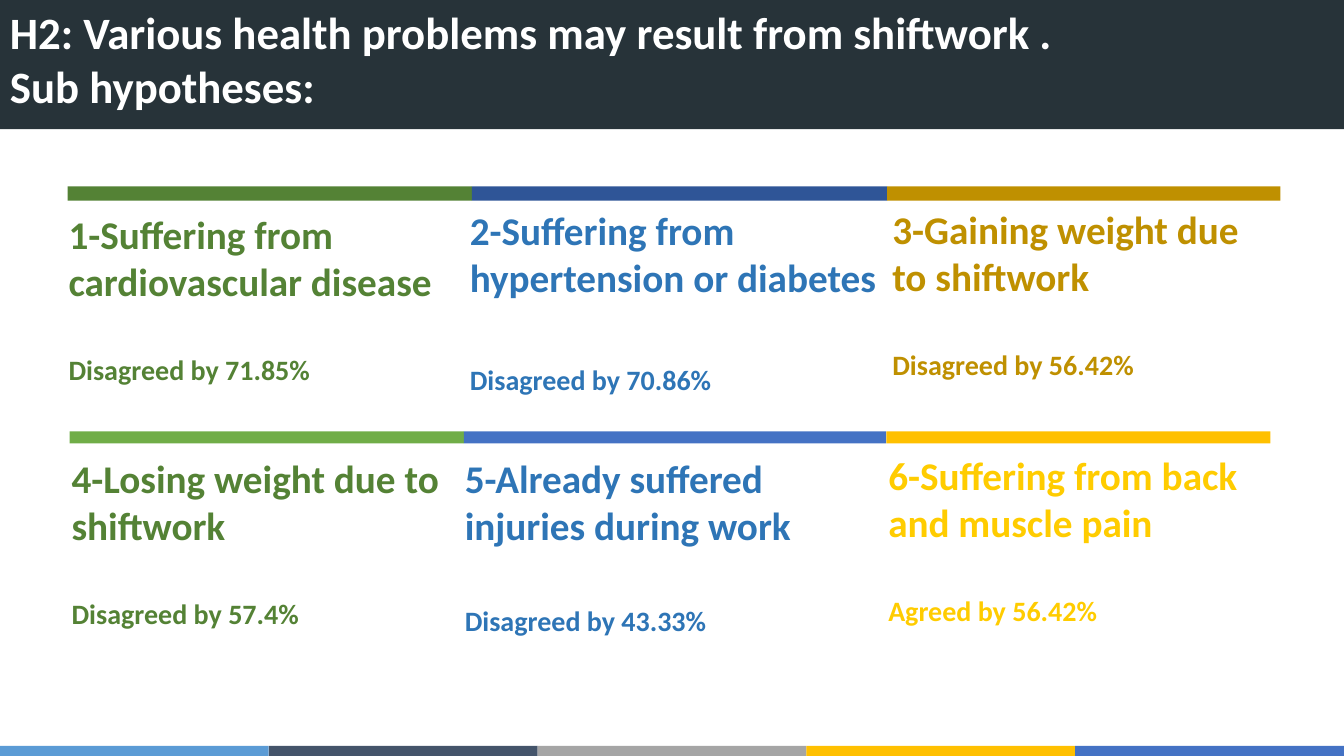
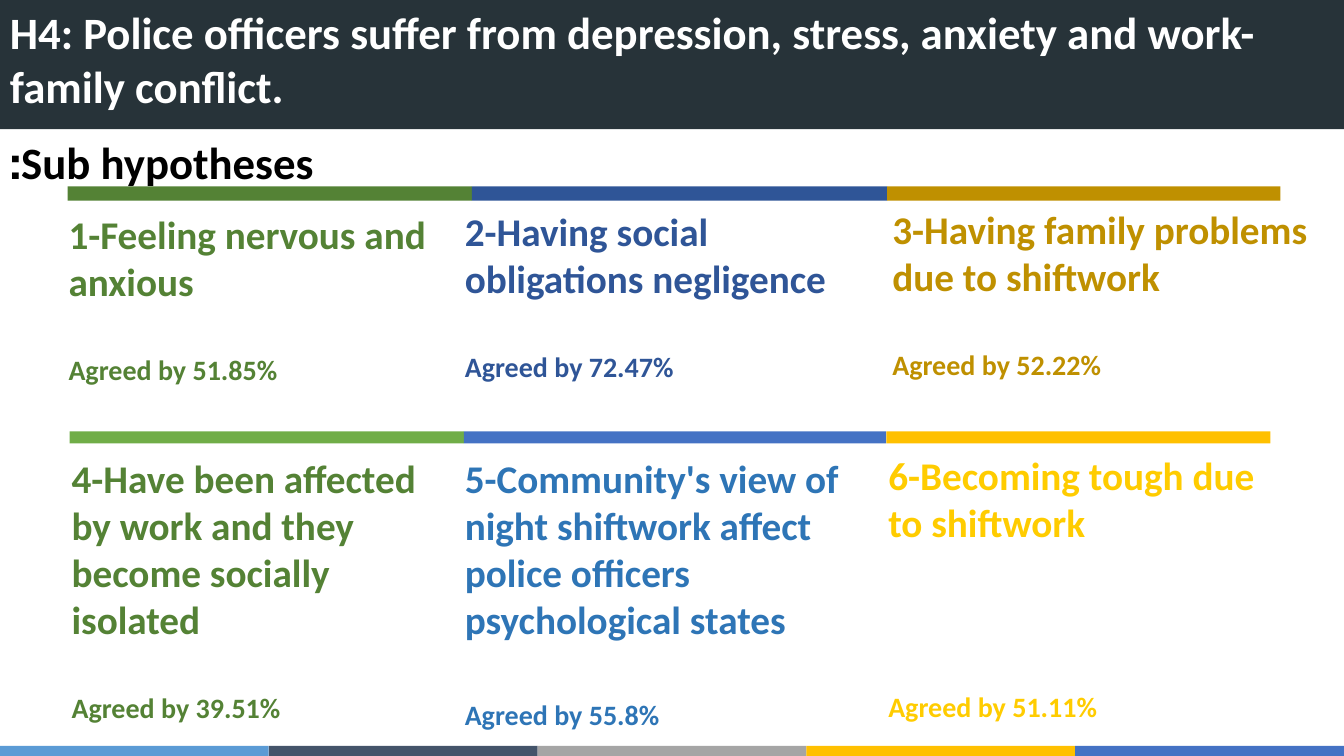
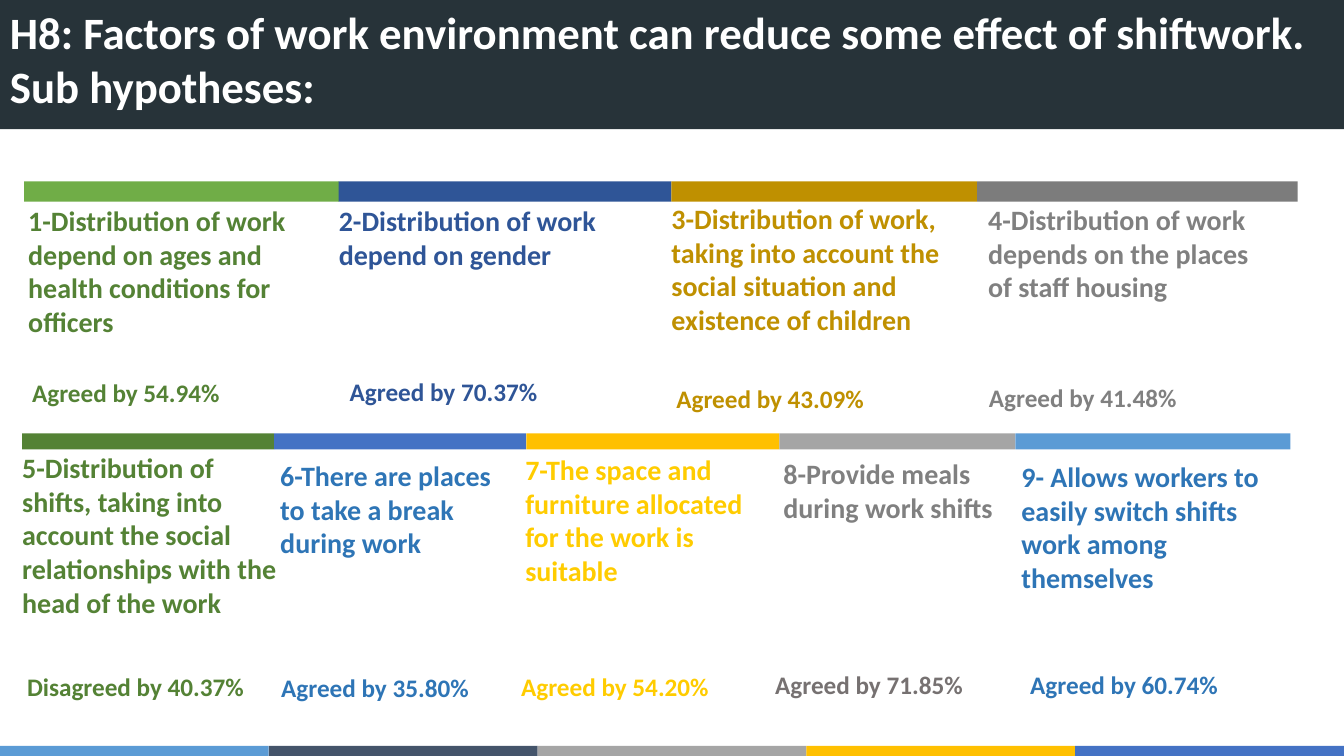
from dataclasses import dataclass, replace
from itertools import pairwise

import pptx
import pptx.dml.color
import pptx.enum.shapes
import pptx.enum.text
import pptx.presentation
import pptx.slide
import pptx.text.text
import pptx.util

Inches = pptx.util.Inches
FONT = "Calibri"
SLIDE_WIDTH, SLIDE_HEIGHT = 13.33, 7.5
CLAIM_HEIGHT, RESULT_HEIGHT = 2.0, 0.4
COLORS = {
    "white": "FFFFFF",
    "black": "000000",
    "header": "273339",
    "sky": "5B9BD5",
    "slate": "44546A",
    "silver": "A5A5A5",
    "amber": "FFC000",
    "blue": "4472C4",
    "green": "70AD47",
    "forest": "548235",
    "navy": "2F5597",
    "ocean": "2E75B6",
    "gold": "BF9000",
    "yellow": "FFCC00",
    "steel": "7C7C7C",
    "gray": "808080",
    "stone": "767171",
}
FOOTER_COLORS = ["sky", "slate", "silver", "amber", "blue"]


@dataclass(frozen=True)
class Stripe:
    """A row of touching bars; each color fills the span between two edges."""
    top: float
    height: float
    edges: list[float]
    colors: list[str]


@dataclass(frozen=True)
class Slot:
    """Place and color of a text; gap is the space in points before its result."""
    left: float
    top: float
    width: float
    color: str
    gap: float = 34.2


@dataclass(frozen=True)
class Finding:
    claim: str
    result: str


FOOTER = Stripe(7.4, 0.1, [SLIDE_WIDTH * i / 5 for i in range(6)], FOOTER_COLORS)
SIX_STRIPES = [
    Stripe(1.85, 0.14, [0.67, 4.68, 8.8, 12.7], ["forest", "navy", "gold"]),
    Stripe(4.28, 0.12, [0.69, 4.6, 8.79, 12.6], ["green", "blue", "amber"]),
]
NINE_STRIPES = [
    Stripe(1.8, 0.2, [0.24, 3.36, 6.66, 9.69, 12.87],
           ["green", "navy", "gold", "steel"]),
    Stripe(4.3, 0.16, [0.22, 2.72, 5.22, 7.73, 10.07, 12.8],
           ["forest", "blue", "amber", "silver", "sky"]),
]

HEALTH_SLOTS = [
    Slot(0.68, 2.09, 3.97, "forest"),
    Slot(4.66, 2.05, 4.24, "ocean", 43.9),
    Slot(8.85, 2.04, 3.85, "gold"),
    Slot(0.71, 4.51, 3.91, "forest"),
    Slot(4.61, 4.51, 4.16, "ocean", 39.1),
    Slot(8.81, 4.48, 3.85, "yellow"),
]
STRESS_SLOTS = [
    HEALTH_SLOTS[0],
    Slot(4.61, 2.06, 4.28, "navy"),
    replace(HEALTH_SLOTS[2], width=4.48),
    *HEALTH_SLOTS[3:5],
    replace(HEALTH_SLOTS[5], gap=102.5),
]
FACTOR_SLOTS = [
    Slot(0.28, 2.02, 3.09, "forest"),
    Slot(3.36, 2.02, 3.09, "navy"),
    Slot(6.66, 2.0, 3.02, "gold"),
    Slot(9.8, 2.01, 2.91, "gray"),
    Slot(0.22, 4.47, 2.77, "forest"),
    Slot(2.78, 4.55, 2.27, "ocean"),
    Slot(5.21, 4.49, 2.48, "yellow"),
    Slot(7.77, 4.53, 2.38, "gray"),
    Slot(10.13, 4.56, 2.81, "ocean"),
]
RESULT_SLOTS = [
    Slot(0.22, 3.69, 2.44, "forest"),
    Slot(3.37, 3.68, 2.44, "navy"),
    Slot(6.61, 3.75, 2.44, "gold"),
    Slot(9.71, 3.74, 2.44, "gray"),
    Slot(0.17, 6.61, 2.44, "forest"),
    Slot(2.69, 6.62, 2.44, "ocean"),
    Slot(5.07, 6.61, 2.44, "yellow"),
    Slot(7.59, 6.59, 2.44, "stone"),
    Slot(10.12, 6.59, 2.44, "ocean"),
]

HEALTH_FINDINGS = [
    Finding("1-Suffering from cardiovascular disease", "Disagreed by 71.85%"),
    Finding("2-Suffering from hypertension or diabetes", "Disagreed by 70.86%"),
    Finding("3-Gaining weight due to shiftwork", "Disagreed by 56.42%"),
    Finding("4-Losing weight due to shiftwork", "Disagreed by 57.4%"),
    Finding("5-Already suffered injuries during work", "Disagreed by 43.33%"),
    Finding("6-Suffering from back and muscle pain", "Agreed by 56.42%"),
]
STRESS_FINDINGS = [
    Finding("1-Feeling nervous and anxious", "Agreed by 51.85%"),
    Finding("2-Having social obligations negligence", "Agreed by 72.47%"),
    Finding("3-Having family problems due to shiftwork", "Agreed by 52.22%"),
    Finding("4-Have been affected by work and they become socially isolated",
            "Agreed by 39.51%"),
    Finding("5-Community's view of night shiftwork affect police officers "
            "psychological states", "Agreed by 55.8%"),
    Finding("6-Becoming tough due to shiftwork", "Agreed by 51.11%"),
]
FACTOR_FINDINGS = [
    Finding("1-Distribution of work depend on ages and health conditions for officers",
            "Agreed by 54.94%"),
    Finding("2-Distribution of work depend on gender", "Agreed by 70.37%"),
    Finding("3-Distribution of work, taking into account the social situation "
            "and existence of children", "Agreed by 43.09%"),
    Finding("4-Distribution of work depends on the places of staff housing",
            "Agreed by 41.48%"),
    Finding("5-Distribution of shifts, taking into account the social "
            "relationships with the head of the work", "Disagreed by 40.37%"),
    Finding("6-There are places to take a break during work", "Agreed by 35.80%"),
    Finding("7-The space and furniture allocated for the work is suitable",
            "Agreed by 54.20%"),
    Finding("8-Provide meals during work shifts", "Agreed by 71.85%"),
    Finding("9- Allows workers to easily switch shifts work among themselves",
            "Agreed by 60.74%"),
]


def rgb(color: str) -> pptx.dml.color.RGBColor:
    return pptx.dml.color.RGBColor.from_string(COLORS[color])


def add_bar(slide: pptx.slide.Slide, left: float, top: float,
            width: float, height: float, color: str) -> None:
    bar = slide.shapes.add_shape(
        pptx.enum.shapes.MSO_SHAPE.RECTANGLE,
        Inches(left), Inches(top), Inches(width), Inches(height))
    bar.shadow.inherit = False
    bar.fill.solid()
    bar.fill.fore_color.rgb = rgb(color)
    bar.line.fill.background()


def add_stripe(slide: pptx.slide.Slide, stripe: Stripe) -> None:
    for (left, right), color in zip(pairwise(stripe.edges), stripe.colors):
        add_bar(slide, left, stripe.top, right - left, stripe.height, color)


def add_text(slide: pptx.slide.Slide, slot: Slot, height: float,
             lines: list[str], sizes: list[float]) -> pptx.text.text.TextFrame:
    """Write one bold paragraph per line, each in its own size."""
    frame = slide.shapes.add_textbox(
        Inches(slot.left), Inches(slot.top),
        Inches(slot.width), Inches(height)).text_frame
    frame.word_wrap = True
    frame.text = "\n".join(lines)
    for paragraph, size in zip(frame.paragraphs, sizes):
        paragraph.font.name = FONT
        paragraph.font.size = pptx.util.Pt(size)
        paragraph.font.bold = True
        paragraph.font.color.rgb = rgb(slot.color)
    return frame


def add_claim(slide: pptx.slide.Slide, slot: Slot,
              lines: list[str], sizes: list[float]) -> None:
    """Write a claim flush with its slot, with its result below if given."""
    frame = add_text(slide, slot, CLAIM_HEIGHT, lines, sizes)
    frame.margin_left = frame.margin_top = frame.margin_bottom = 0
    frame.margin_right = Inches(0.13)
    for result in frame.paragraphs[1:]:
        result.space_before = pptx.util.Pt(slot.gap)


def add_hypothesis_slide(deck: pptx.presentation.Presentation, title: list[str],
                         stripes: list[Stripe]) -> pptx.slide.Slide:
    slide = deck.slides.add_slide(deck.slide_layouts[6])
    add_stripe(slide, FOOTER)
    add_bar(slide, 0, -0.01, SLIDE_WIDTH, 1.29, "header")
    add_text(slide, Slot(0, 0, SLIDE_WIDTH, "white"), 1.18, title, [32] * len(title))
    for stripe in stripes:
        add_stripe(slide, stripe)
    return slide


def add_six_findings(slide: pptx.slide.Slide, slots: list[Slot],
                     findings: list[Finding]) -> None:
    for slot, finding in zip(slots, findings):
        add_claim(slide, slot, [finding.claim, finding.result], [28, 20])


def add_right_to_left_subtitle(slide: pptx.slide.Slide, subtitle: str) -> None:
    frame = add_text(slide, Slot(0, 1.29, 5.09, "black"), 0.64, [subtitle], [32])
    paragraph = frame.paragraphs[0]
    paragraph.alignment = pptx.enum.text.PP_ALIGN.LEFT
    paragraph._p.get_or_add_pPr().set("rtl", "1")


def main() -> None:
    deck = pptx.Presentation()
    deck.slide_width = Inches(SLIDE_WIDTH)
    deck.slide_height = Inches(SLIDE_HEIGHT)

    health = add_hypothesis_slide(
        deck, ["H2: Various health problems may result from shiftwork .",
               "Sub hypotheses:"], SIX_STRIPES)
    add_six_findings(health, HEALTH_SLOTS, HEALTH_FINDINGS)

    stress = add_hypothesis_slide(
        deck, ["H4: Police officers suffer from depression, stress, anxiety "
               "and work-family conflict."], SIX_STRIPES)
    add_six_findings(stress, STRESS_SLOTS, STRESS_FINDINGS)
    add_right_to_left_subtitle(stress, "Sub hypotheses:")

    factors = add_hypothesis_slide(
        deck, ["H8: Factors of work environment can reduce some effect of shiftwork.",
               "Sub hypotheses:"], NINE_STRIPES)
    for slot, result_slot, finding in zip(FACTOR_SLOTS, RESULT_SLOTS, FACTOR_FINDINGS):
        add_claim(factors, slot, [finding.claim], [20])
        add_text(factors, result_slot, RESULT_HEIGHT, [finding.result], [18])

    deck.save("out.pptx")


if __name__ == "__main__":
    main()
